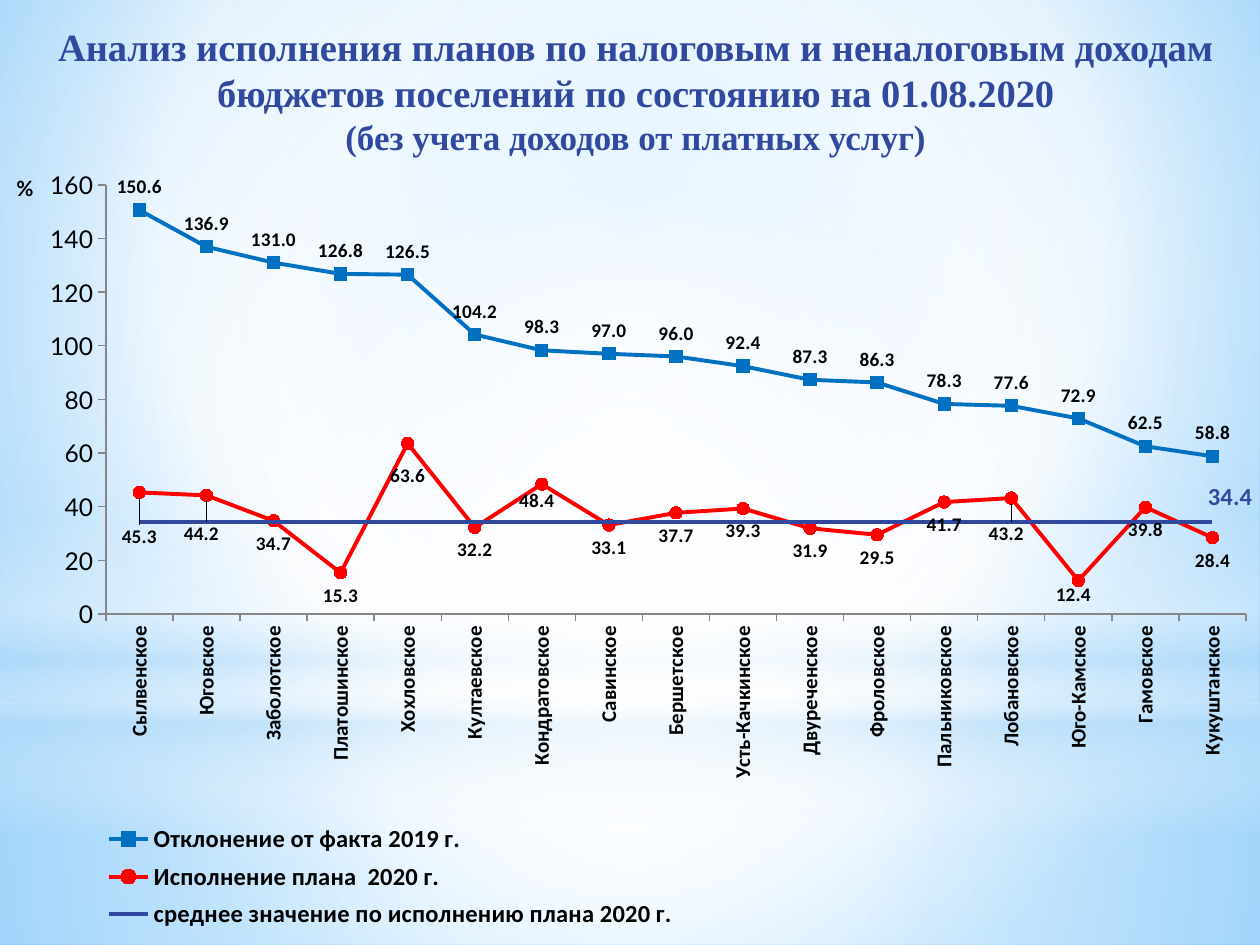
from lxml.etree import SubElement, fromstring
from pptx import Presentation
from pptx.chart.data import CategoryChartData
from pptx.dml.color import RGBColor
from pptx.enum.chart import (XL_CHART_TYPE, XL_LABEL_POSITION, XL_LEGEND_POSITION,
                             XL_MARKER_STYLE, XL_TICK_MARK)
from pptx.enum.shapes import MSO_SHAPE
from pptx.enum.text import MSO_ANCHOR, MSO_AUTO_SIZE, PP_ALIGN
from pptx.oxml import parse_xml
from pptx.oxml.ns import nsdecls, qn
from pptx.util import Inches, Pt

THEME = {
    "navy": RGBColor.from_string("31489F"),
    "blue": RGBColor.from_string("0070C0"),
    "red": RGBColor.from_string("FF0000"),
    "black": RGBColor.from_string("000000"),
    "axis": RGBColor.from_string("868686"),
    "title_font": "Times New Roman", "chart_font": "Lato", "label_font": "Calibri",
    "title": Pt(22), "subtitle": Pt(20), "chart": Pt(18), "scale": Pt(14),
    "legend": Pt(14), "category": Pt(12), "label": Pt(11), "average": Pt(14),
    "line": Pt(2.25),
}


def gradient(stops, focus=None):
    """Gradient of (position, colour, opacity); circular around focus, else vertical."""
    marks = "".join(
        f'<a:gs pos="{pos * 1000}"><a:srgbClr val="{color}">'
        f'<a:alpha val="{alpha * 1000}"/></a:srgbClr></a:gs>'
        for pos, color, alpha in stops)
    shade = '<a:lin ang="5400000" scaled="0"/>'
    if focus:
        left, top, right, bottom = (edge * 1000 for edge in focus)
        shade = (f'<a:path path="circle"><a:fillToRect l="{left}" t="{top}" '
                 f'r="{right}" b="{bottom}"/></a:path>')
    return parse_xml(f'<a:gradFill {nsdecls("a")} rotWithShape="1">'
                     f'<a:gsLst>{marks}</a:gsLst>{shade}</a:gradFill>')


def set_layout(parent, index, **values):
    """Give a chart part a manual layout as fractions of the chart."""
    for old in parent.findall(qn("c:layout")):
        parent.remove(old)
    items = "".join(f'<c:{key} val="{value}"/>' for key, value in values.items())
    parent.insert(index, parse_xml(f'<c:layout {nsdecls("c")}><c:manualLayout>{items}'
                                   '</c:manualLayout></c:layout>'))


deck = Presentation()
deck.slide_width, deck.slide_height = Inches(10), Inches(7.5)
page = deck.slides.add_slide(deck.slide_layouts[5])

# Background
page.background.fill.solid()
page_fill = page.background._cSld.find(qn("p:bg")).find(qn("p:bgPr"))
page_fill.replace(page_fill[0], gradient(
    [(0, "9ED5FF", 100), (60, "FFFFFF", 100), (100, "5BB9FF", 100)], (20, 10, 20, 60)))

# Light washes over the background
CENTER = (50, 50, 50, 50)
washes = [
    (MSO_SHAPE.RECTANGLE, 5.58, 1.92, CENTER,
     [(0, "FFFFFF", 91), (37, "FFFFFF", 76), (100, "B4DCFA", 79)]),
    (MSO_SHAPE.RECTANGLE, 0, 5.58, CENTER,
     [(0, "FFFFFF", 89), (48, "FFFFFF", 62), (100, "B4DCFA", 79)]),
    (MSO_SHAPE.RECTANGLE, 4.12, 2.5, None,
     [(0, "FFFFFF", 0), (29, "FFFFFF", 30), (45, "B4DCFA", 40),
      (55, "FFFFFF", 26), (65, "B4DCFA", 60), (100, "FFFFFF", 0)]),
    (MSO_SHAPE.OVAL, 1.75, 5.58, CENTER, [(0, "FFFFFF", 100), (56, "FFFFFF", 0)]),
]
for kind, top, height, focus, stops in washes:
    wash = page.shapes.add_shape(kind, 0, Inches(top), Inches(10), Inches(height))
    wash.shadow.inherit = False
    wash.line.fill.background()
    wash.fill.solid()
    properties = wash._element.spPr
    properties.replace(properties.find(qn("a:solidFill")), gradient(stops, focus))

# Title, raised above the washes
title = page.shapes.title
page.shapes._spTree.append(title._element)
title.left, title.top = Inches(0.2), Inches(0.13)
title.width, title.height = Inches(9.69), Inches(1.17)
frame = title.text_frame
frame.text = ("Анализ исполнения планов по налоговым и неналоговым доходам бюджетов "
              "поселений по состоянию на 01.08.2020\v(без учета доходов от платных услуг)")
frame.word_wrap = True
frame.auto_size = MSO_AUTO_SIZE.NONE
frame.vertical_anchor = MSO_ANCHOR.MIDDLE
para = frame.paragraphs[0]
para.alignment = PP_ALIGN.CENTER
for span, size in zip(para.runs, (THEME["title"], THEME["subtitle"])):
    span.font.name, span.font.size, span.font.bold = THEME["title_font"], size, True
    span.font.color.rgb = THEME["navy"]
line_break = para._p.find(qn("a:br"))
SubElement(line_break, qn("a:rPr")).set("sz", str(int(THEME["title"].pt * 100)))

# Chart data
settlements = [
    "Сылвенское", "Юговское", "Заболотское", "Платошинское", "Хохловское", "Култаевское",
    "Кондратовское", "Савинское", "Бершетское", "Усть-Качкинское", "Двуреченское",
    "Фроловское", "Пальниковское", "Лобановское", "Юго-Камское", "Гамовское", "Кукуштанское"]
data = CategoryChartData(number_format="#,##0.0")
data.categories = settlements
data.add_series("Отклонение от факта 2019 г.", [
    150.6, 136.9, 131, 126.8, 126.5, 104.2, 98.3, 97, 96, 92.4, 87.3, 86.3, 78.3, 77.6,
    72.9, 62.5, 58.8])
data.add_series("Исполнение плана  2020 г.", [
    45.3, 44.2, 34.7, 15.3, 63.6, 32.2, 48.4, 33.1, 37.7, 39.3, 31.9, 29.5, 41.7, 43.2,
    12.4, 39.8, 28.4])
data.add_series("среднее значение по исполнению плана 2020 г.", [34.4] * len(settlements))
chart = page.shapes.add_chart(XL_CHART_TYPE.LINE_MARKERS, Inches(0), Inches(0.73),
                              Inches(10), Inches(6.77), data).chart
chart.has_title = False
chart.font.name, chart.font.size = THEME["chart_font"], THEME["chart"]
chart.font.color.rgb = THEME["black"]
chart.plots[0].vary_by_categories = False
set_layout(chart._chartSpace.chart.plotArea, 0, layoutTarget="inner", xMode="edge",
           yMode="edge", x=0.084, y=0.109, w=0.905, h=0.503)

# Axes
for axis in (chart.category_axis, chart.value_axis):
    axis.has_major_gridlines = False
    axis.major_tick_mark = XL_TICK_MARK.OUTSIDE
    axis.format.line.color.rgb = THEME["axis"]
names = chart.category_axis.tick_labels.font
names.name, names.size, names.bold = THEME["label_font"], THEME["category"], True
chart.category_axis._element.txPr.bodyPr.set("rot", "-5400000")
scale = chart.value_axis
scale.minimum_scale, scale.maximum_scale, scale.major_unit = 0, 160, 20
scale.tick_labels.font.size = THEME["scale"]
scale.tick_labels.number_format = "#,##0"
scale.tick_labels.number_format_is_linked = False
unit = scale.axis_title
unit.text_frame.text = "%"
unit.text_frame._txBody.bodyPr.set("rot", "0")
unit_font = unit.text_frame.paragraphs[0].runs[0].font
unit_font.size, unit_font.bold = THEME["category"], True
set_layout(unit._element, 1, xMode="edge", yMode="edge", x=0.01, y=0.09)

# Legend, one entry per row
chart.has_legend = True
legend = chart.legend
legend.position = XL_LEGEND_POSITION.BOTTOM
legend.include_in_layout = False
legend.font.name, legend.font.size, legend.font.bold = (
    THEME["label_font"], THEME["legend"], True)
set_layout(legend._element, 1, xMode="edge", yMode="edge", x=0.08, y=0.85, w=0.46, h=0.14)

# Series: colour, marker, label position, label size, shifted labels
ABOVE, BELOW = XL_LABEL_POSITION.ABOVE, XL_LABEL_POSITION.BELOW
styles = [
    ("blue", XL_MARKER_STYLE.SQUARE, ABOVE, "label", "black", {}),
    ("red", XL_MARKER_STYLE.CIRCLE, BELOW, "label", "black", {
        0: (0, 0.025), 1: (-0.004, 0.018), 4: (0, 0.011), 6: (-0.004, -0.007),
        13: (-0.004, 0.015), 14: (-0.004, -0.01)}),
    ("navy", XL_MARKER_STYLE.NONE, ABOVE, "average", "navy", {16: (0.014, -0.005)}),
]
for series, (color, marker, position, size, ink, shifts) in zip(chart.plots[0].series, styles):
    series.smooth = False
    series.format.line.color.rgb = THEME[color]
    series.format.line.width = THEME["line"]
    series.marker.style = marker
    if marker != XL_MARKER_STYLE.NONE:
        series.marker.size = 7
        series.marker.format.fill.solid()
        series.marker.format.fill.fore_color.rgb = THEME[color]
        series.marker.format.line.color.rgb = THEME[color]
    labels = series.data_labels
    labels.show_value = color != "navy"
    labels.number_format, labels.number_format_is_linked = "#,##0.0", False
    labels.position = position
    moved = [series.points[index].data_label for index in shifts]
    for label in [labels, *moved]:
        label.font.name, label.font.size, label.font.bold = (
            THEME["label_font"], THEME[size], True)
        label.font.color.rgb = THEME[ink]
        label.position = position
    for element, (right, down) in zip(series._element.xpath("c:dLbls/c:dLbl"),
                                      shifts.values()):
        set_layout(element, 1, x=right, y=down)

deck.save("out.pptx")
